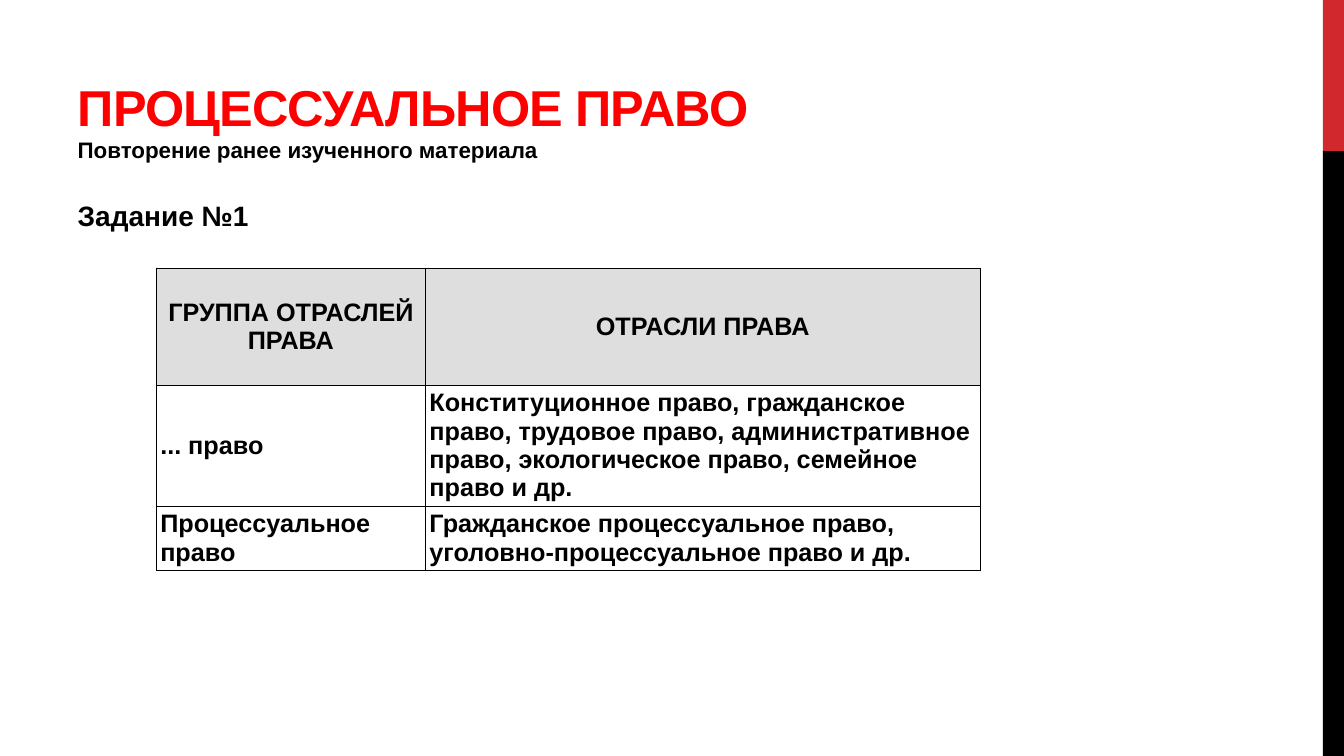
from copy import deepcopy

from lxml import etree
from pptx import Presentation
from pptx import util as u
from pptx.dml.color import RGBColor
from pptx.enum import shapes, text
from pptx.oxml import ns

W, H = 13.33, 7.5
FONT = "Arial"
RED, BLACK, GREY = "FF0000", "000000", "DEDEDE"

TITLE = "ПРОЦЕССУАЛЬНОЕ ПРАВО "
SUBTITLE = "Повторение ранее изученного материала"
TASK = "Задание №1"
ROWS = [
    ("ГРУППА ОТРАСЛЕЙ ПРАВА", "ОТРАСЛИ ПРАВА"),
    ("... право",
     "Конституционное право, гражданское право, трудовое право, "
     "административное право, экологическое право, семейное право и др."),
    ("Процессуальное право",
     "Гражданское процессуальное право, уголовно-процессуальное право и др."),
]
COL_WIDTHS = (2.67, 5.5)
ROW_HEIGHTS = (1.16, 1.2, 0.64)
STRIPE_W = 0.21
STRIPES = [("D1282E", 0, H / 5), (BLACK, H / 5, H * 4 / 5)]


def rgb(value):
    return RGBColor.from_string(value)


def inches(*values):
    return [u.Inches(v) for v in values]


def add_text(p, content, size, color=BLACK, spacing=0):
    """Append a bold run; spacing is in points."""
    r = p.add_run()
    r.text = content
    r.font.name, r.font.size, r.font.bold = FONT, u.Pt(size), True
    r.font.color.rgb = rgb(color)
    if spacing:
        r._r.get_or_add_rPr().set("spc", str(round(spacing * 100)))
    return r


def place(sp, *box):
    """Move a placeholder and return its first paragraph."""
    sp.left, sp.top, sp.width, sp.height = inches(*box)
    tf = sp.text_frame
    tf.word_wrap = True
    tf.auto_size = text.MSO_AUTO_SIZE.NONE
    tf.paragraphs[0].alignment = text.PP_ALIGN.LEFT
    return tf.paragraphs[0]


def add_borders(cell, color=BLACK, width=0.75):
    props = cell._tc.get_or_add_tcPr()
    for side in ("lnL", "lnR", "lnT", "lnB"):
        ln = etree.SubElement(props, ns.qn("a:" + side), w=str(u.Pt(width)))
        fill = etree.SubElement(ln, ns.qn("a:solidFill"))
        etree.SubElement(fill, ns.qn("a:srgbClr"), val=color)


def add_law_table(slide, left, top):
    box = inches(left, top, sum(COL_WIDTHS), sum(ROW_HEIGHTS))
    table = slide.shapes.add_table(len(ROWS), len(COL_WIDTHS), *box).table
    table.horz_banding = False
    for col, width in zip(table.columns, COL_WIDTHS):
        col.width = u.Inches(width)
    for i, (row, height) in enumerate(zip(table.rows, ROW_HEIGHTS)):
        row.height = u.Inches(height)
        for cell, content in zip(row.cells, ROWS[i]):
            cell.margin_left = cell.margin_right = u.Inches(0.04)
            cell.margin_top = cell.margin_bottom = u.Inches(0.04)
            cell.vertical_anchor = text.MSO_ANCHOR.MIDDLE
            add_borders(cell)
            p = cell.text_frame.paragraphs[0]
            add_text(p, content, 18)
            if i == 0:
                p.alignment = text.PP_ALIGN.CENTER
                cell.fill.solid()
                cell.fill.fore_color.rgb = rgb(GREY)
            else:
                cell.fill.background()


def main():
    prs = Presentation()
    prs.slide_width, prs.slide_height = inches(W, H)
    slide = prs.slides.add_slide(prs.slide_layouts[1])

    title, body = slide.placeholders
    p = place(title, 0.67, 0.17, 8.44, 1.5)
    title.text_frame.vertical_anchor = text.MSO_ANCHOR.BOTTOM
    r = add_text(p, TITLE, 36, RED, spacing=-0.6)
    p.add_line_break()
    p._p[-1].append(deepcopy(r._r.rPr))  # the break keeps the heading's size
    add_text(p, SUBTITLE, 16)

    p = place(body, 0.67, 1.92, 11.11, 4.78)
    p.space_after = u.Pt(6)
    props = p._p.get_or_add_pPr()
    props.set("marL", "0")
    props.set("indent", "0")
    etree.SubElement(props, ns.qn("a:buNone"))
    add_text(p, TASK, 20)

    for color, top, height in STRIPES:
        box = inches(W - STRIPE_W, top, STRIPE_W, height)
        sp = slide.shapes.add_shape(shapes.MSO_SHAPE.RECTANGLE, *box)
        sp.shadow.inherit = False
        sp.fill.solid()
        sp.fill.fore_color.rgb = rgb(color)
        sp.line.fill.background()

    add_law_table(slide, 1.55, 2.66)
    prs.save("out.pptx")


if __name__ == "__main__":
    main()
